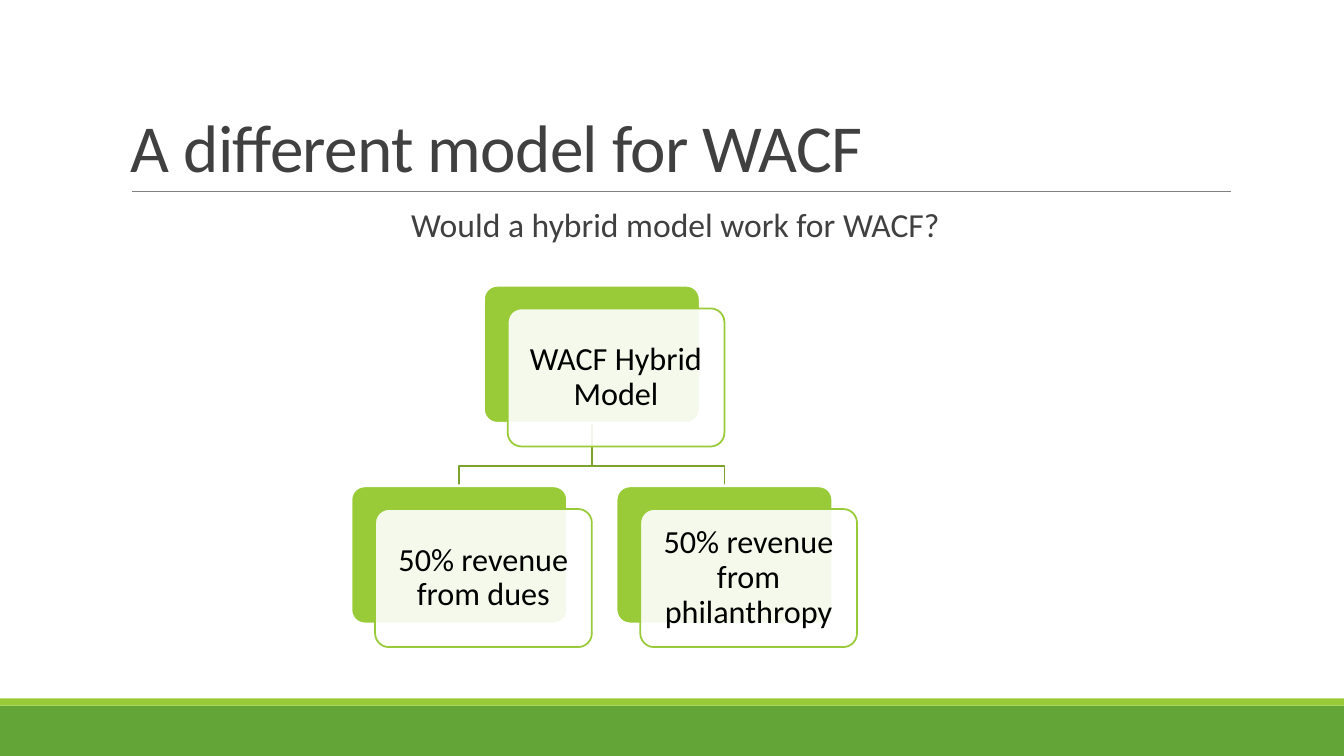
from lxml import etree
from pptx import Presentation
from pptx.dml.color import RGBColor
from pptx.enum.shapes import MSO_CONNECTOR, MSO_SHAPE
from pptx.enum.text import MSO_ANCHOR, PP_ALIGN
from pptx.oxml.ns import qn
from pptx.util import Inches, Pt

WHITE = RGBColor(0xFF, 0xFF, 0xFF)
BLACK = RGBColor(0x00, 0x00, 0x00)
CHARCOAL = RGBColor(0x40, 0x40, 0x40)
GRAY = RGBColor(0x80, 0x80, 0x80)
GREEN = RGBColor(0x63, 0xA5, 0x37)
LIME = RGBColor(0x99, 0xCB, 0x38)
OLIVE = RGBColor(0x7B, 0xA3, 0x2D)

SLIDE_W, SLIDE_H = 13.33, 7.5
CARD_W, CARD_H = 2.15, 1.37
COLUMN, ROW = 2.63, 1.99      # pitch between neighbouring cards and levels
CARD_SHIFT = (0.24, 0.23)     # front card relative to the one behind


def write(shape, text, size, color, align=PP_ALIGN.LEFT, anchor=MSO_ANCHOR.TOP,
          insets=(0.1, 0.05), line_spacing=0.9, tracking=None):
    """Put one formatted paragraph in a shape; insets are side and top/bottom."""
    frame = shape.text_frame
    frame.word_wrap = True
    frame.vertical_anchor = anchor
    frame.margin_left = frame.margin_right = Inches(insets[0])
    frame.margin_top = frame.margin_bottom = Inches(insets[1])
    paragraph = frame.paragraphs[0]
    paragraph.alignment = align
    paragraph.line_spacing = line_spacing
    run = paragraph.add_run()
    run.text = text
    run.font.name = "Calibri"
    run.font.size = Pt(size)
    run.font.color.rgb = color
    if tracking is not None:
        run._r.get_or_add_rPr().set("spc", str(round(tracking * 100)))


def add_block(slide, kind, box, fill, line=None, line_width=1, opacity=None):
    block = slide.shapes.add_shape(kind, *map(Inches, box))
    block.shadow.inherit = False
    block.fill.solid()
    block.fill.fore_color.rgb = fill
    if opacity is not None:
        color = block.fill._xPr.find(qn("a:solidFill"))[0]
        etree.SubElement(color, qn("a:alpha")).set("val", str(opacity * 1000))
    if line is None:
        block.line.fill.background()
    else:
        block.line.color.rgb = line
        block.line.width = Pt(line_width)
    return block


def add_footer(slide, top):
    stripe = 0.07
    add_block(slide, MSO_SHAPE.RECTANGLE, (0, top, SLIDE_W, SLIDE_H - top), GREEN)
    add_block(slide, MSO_SHAPE.RECTANGLE, (0, top - stripe, SLIDE_W, stripe), LIME)


def add_heading(slide, left, top, width, height):
    # Rule under the title
    base = top + height
    ends = (left + 0.11, base, left + width + 0.01, base)
    rule = slide.shapes.add_connector(MSO_CONNECTOR.STRAIGHT, *map(Inches, ends))
    rule.line.color.rgb = GRAY
    rule.line.width = Pt(0.5)
    etree.SubElement(rule._element.spPr, qn("a:effectLst"))

    # Title and question
    title = slide.shapes.add_textbox(*map(Inches, (left, top, width, height)))
    write(title, "A different model for WACF", 48, CHARCOAL,
          anchor=MSO_ANCHOR.BOTTOM, line_spacing=0.85, tracking=-0.5)
    question = slide.shapes.add_textbox(*map(Inches, (left, base + 0.12, width, 0.5)))
    write(question, "Would a hybrid model work for WACF?", 24, CHARCOAL,
          align=PP_ALIGN.CENTER, insets=(0, 0.05))


def add_branch(slide, start, end):
    """Elbow line from the bottom of a parent card to the top of a child."""
    (x1, y1), (x2, y2) = start, end
    bend = y1 + (y2 - y1) * 0.68
    builder = slide.shapes.build_freeform(Inches(x1), Inches(y1))
    corners = [(x1, bend), (x2, bend), (x2, y2)]
    builder.add_line_segments([tuple(map(Inches, c)) for c in corners], close=False)
    branch = builder.convert_to_shape()
    branch.shadow.inherit = False
    branch.fill.background()
    branch.line.color.rgb = OLIVE
    branch.line.width = Pt(1.25)


def add_card(slide, left, top, text):
    dx, dy = CARD_SHIFT
    back = add_block(slide, MSO_SHAPE.ROUNDED_RECTANGLE,
                     (left, top, CARD_W, CARD_H), WHITE and LIME, WHITE, 2)
    front = add_block(slide, MSO_SHAPE.ROUNDED_RECTANGLE,
                      (left + dx, top + dy, CARD_W, CARD_H), WHITE, LIME, 1.25, opacity=90)
    for layer in (back, front):
        layer.adjustments[0] = 0.1
    write(front, text, 23, BLACK, align=PP_ALIGN.CENTER,
          anchor=MSO_ANCHOR.MIDDLE, insets=(0.1, 0.1))


def add_hierarchy(slide, left, top, parent, children):
    parent_left = left + COLUMN * (len(children) - 1) / 2
    child_lefts = [left + COLUMN * i for i in range(len(children))]
    child_top = top + ROW

    # Branches lie behind the cards
    for child_left in child_lefts:
        add_branch(slide, (parent_left + CARD_W / 2, top + CARD_H),
                   (child_left + CARD_W / 2, child_top))

    add_card(slide, parent_left, top, parent)
    for child_left, text in zip(child_lefts, children):
        add_card(slide, child_left, child_top, text)


def main():
    prs = Presentation()
    prs.slide_width, prs.slide_height = Inches(SLIDE_W), Inches(SLIDE_H)
    slide = prs.slides.add_slide(prs.slide_layouts[6])
    add_footer(slide, top=7)
    add_heading(slide, left=1.2, top=0.31, width=11, height=1.59)
    add_hierarchy(slide, left=3.48, top=2.83, parent="WACF Hybrid Model",
                  children=["50% revenue from dues", "50% revenue from philanthropy"])
    prs.save("out.pptx")


if __name__ == "__main__":
    main()
